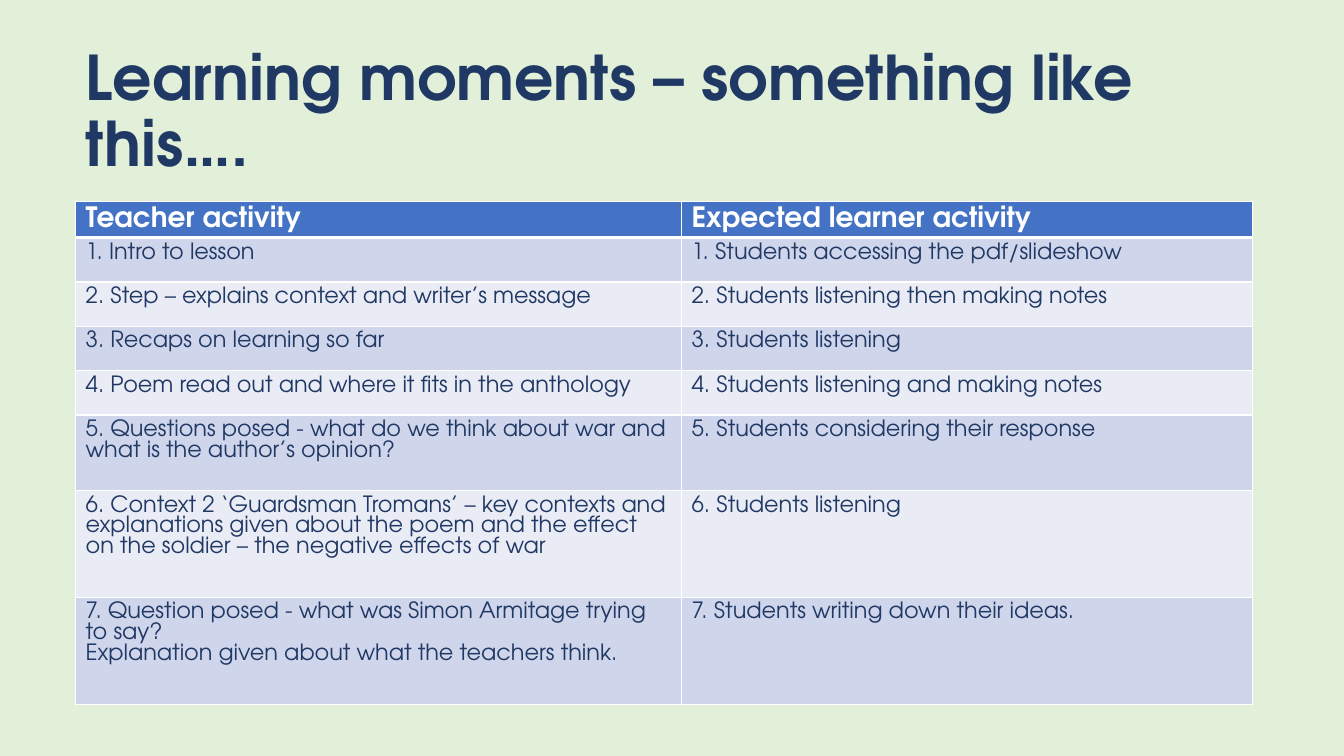
from lxml import etree
from pptx import Presentation
from pptx.dml.color import RGBColor
from pptx.enum.text import MSO_ANCHOR, MSO_AUTO_SIZE, PP_ALIGN
from pptx.oxml.ns import qn
from pptx.util import Inches, Pt

TITLE = "Learning moments – something like this…."
HEADER = ("Teacher activity", "Expected learner activity")
STEPS = [
    ("1. Intro to lesson", "1. Students accessing the pdf/slideshow"),
    ("2. Step – explains context and writer’s message",
     "2. Students listening then making notes"),
    ("3. Recaps on learning so far", "3. Students listening"),
    ("4. Poem read out and where it fits in the anthology",
     "4. Students listening and making notes"),
    ("5. Questions posed - what do we think about war and what is the author’s opinion?",
     "5. Students considering their response"),
    ("6. Context 2 ‘Guardsman Tromans’ – key contexts and explanations given about "
     "the poem and the effect on the soldier – the negative effects of war",
     "6. Students listening"),
    ("7. Question posed - what was Simon Armitage trying to say?\n"
     "Explanation given about what the teachers think.",
     "7. Students writing down their ideas."),
]
COLUMN_WIDTHS = (6.01, 5.66)
ROW_HEIGHTS = (0.25, 0.44, 0.44, 0.44, 0.44, 0.75, 1.06, 1.06)
LEFT, TABLE_TOP = 0.75, 2
FONT = "TeX Gyre Adventor"
COLORS = {"page": "E2F0D9", "ink": "203864", "white": "FFFFFF",
          "header": "4472C4", "odd": "CFD5EA", "even": "E9EBF5"}


def color(name):
    return RGBColor.from_string(COLORS[name])


def add_span(para, text, size, ink, bold):
    para.alignment = PP_ALIGN.LEFT
    span = para.add_run()
    span.text = text
    span.font.name = FONT
    span.font.size = Pt(size)
    span.font.bold = bold
    span.font.color.rgb = color(ink)


def set_borders(cell, top_width, bottom_width):
    """Give the cell white edges; borders must precede the fill in the XML."""
    properties = cell._tc.get_or_add_tcPr()
    widths = {"lnL": 1, "lnR": 1, "lnT": top_width, "lnB": bottom_width}
    for position, (edge, width) in enumerate(widths.items()):
        line = etree.Element(qn(f"a:{edge}"), w=str(Pt(width)))
        fill = etree.SubElement(line, qn("a:solidFill"))
        etree.SubElement(fill, qn("a:srgbClr"), val=COLORS["white"])
        properties.insert(position, line)


def fill_cell(cell, text, row):
    is_header = row == 0
    size, ink = (20, "white") if is_header else (16, "ink")
    frame = cell.text_frame
    for index, line in enumerate(text.split("\n")):
        para = frame.add_paragraph() if index else frame.paragraphs[0]
        add_span(para, line, size, ink, is_header)
    cell.fill.solid()
    cell.fill.fore_color.rgb = color(
        "header" if is_header else "odd" if row % 2 else "even")
    # The rule under the header is thick, on both cells that share it
    set_borders(cell, 3 if row == 1 else 1, 3 if is_header else 1)


def main():
    deck = Presentation()
    deck.slide_width, deck.slide_height = Inches(13.33), Inches(7.5)
    page = deck.slides.add_slide(deck.slide_layouts[5])
    page.background.fill.solid()
    page.background.fill.fore_color.rgb = color("page")

    # Title
    title = page.shapes.title
    title.left, title.top = Inches(LEFT), Inches(0.4)
    title.width, title.height = Inches(sum(COLUMN_WIDTHS)), Inches(1.45)
    frame = title.text_frame
    frame.word_wrap = True
    frame.auto_size = MSO_AUTO_SIZE.NONE
    frame.vertical_anchor = MSO_ANCHOR.MIDDLE
    heading = frame.paragraphs[0]
    heading.line_spacing = 0.9
    add_span(heading, TITLE, 44, "ink", True)

    # Activity table
    rows = [HEADER, *STEPS]
    table = page.shapes.add_table(
        len(rows), len(HEADER), Inches(LEFT), Inches(TABLE_TOP),
        Inches(sum(COLUMN_WIDTHS)), Inches(sum(ROW_HEIGHTS))).table
    for column, width in zip(table.columns, COLUMN_WIDTHS):
        column.width = Inches(width)
    for row, (texts, height) in enumerate(zip(rows, ROW_HEIGHTS)):
        table.rows[row].height = Inches(height)
        for column, text in enumerate(texts):
            fill_cell(table.cell(row, column), text, row)

    deck.save("out.pptx")


if __name__ == "__main__":
    main()
